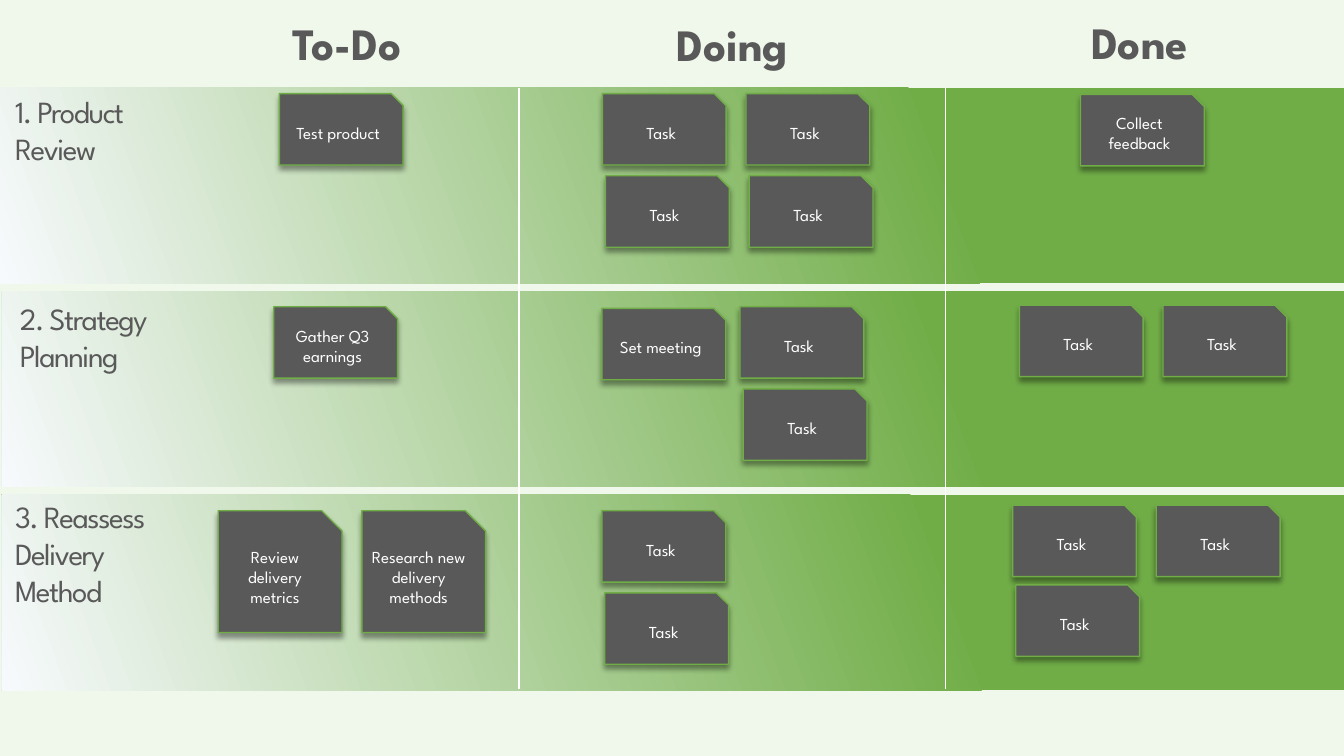
from dataclasses import dataclass

import pptx
import pptx.dml.color
import pptx.enum.shapes
import pptx.enum.text
import pptx.oxml
import pptx.oxml.ns
import pptx.util
from pptx.util import Cm

RGB = pptx.dml.color.RGBColor.from_string
SHAPES = pptx.enum.shapes.MSO_SHAPE
ALIGN = pptx.enum.text.PP_ALIGN


@dataclass(frozen=True)
class Theme:
    font: str = "League Spartan"
    background: str = "F0F7EB"
    green: str = "70AD47"
    pale: str = "F7FAFD"
    gray: str = "595959"
    white: str = "FFFFFF"
    heading_size: int = 32
    label_size: int = 22
    card_size: int = 12


THEME = Theme()

# Board measures in centimetres
SLIDE_WIDTH, SLIDE_HEIGHT = 33.87, 19.05
BAND_TOP, BAND_HEIGHT, BAND_PITCH = 2.21, 4.93, 5.13
BOARD_BOTTOM = 17.37
CARD_WIDTH, CARD_HEIGHT, TALL_CARD_HEIGHT = 3.12, 1.8, 3.07
CARD_PITCH = 3.62

# Column headings: text, left, top, width
HEADINGS = [
    ("To-Do", 4.42, 0.28, 8.66),
    ("Doing", 13.08, 0.3, 10.75),
    ("Done", 23.83, 0.25, 9.78),
]

# Rows: label, band left, label left, label top, label height
ROWS = [
    ("1. Product Review", 0, 0.13, 2.21, 2.13),
    ("2. Strategy Planning", 0.05, 0.25, 7.44, 2.13),
    ("3. Reassess Delivery Method", 0.05, 0.13, 12.42, 3.07),
]

# Runs of cards side by side: left, top, height, labels
CARD_RUNS = [
    # Product review
    (7.04, 2.36, CARD_HEIGHT, ["Test product"]),
    (15.18, 2.36, CARD_HEIGHT, ["Task", "Task"]),
    (15.26, 4.43, CARD_HEIGHT, ["Task", "Task"]),
    (27.23, 2.38, CARD_HEIGHT, ["Collect feedback"]),
    # Strategy planning
    (6.9, 7.73, CARD_HEIGHT, ["Gather Q3 earnings"]),
    (15.17, 7.77, CARD_HEIGHT, ["Set meeting"]),
    (18.65, 7.73, CARD_HEIGHT, ["Task"]),
    (18.73, 9.8, CARD_HEIGHT, ["Task"]),
    (25.69, 7.69, CARD_HEIGHT, ["Task", "Task"]),
    # Delivery method
    (5.5, 12.87, TALL_CARD_HEIGHT, ["Review delivery metrics", "Research new delivery methods"]),
    (15.17, 12.87, CARD_HEIGHT, ["Task"]),
    (15.24, 14.94, CARD_HEIGHT, ["Task"]),
    (25.52, 12.73, CARD_HEIGHT, ["Task", "Task"]),
    (25.6, 14.74, CARD_HEIGHT, ["Task"]),
]


def add_run(paragraph, text, size, color, bold=False, spacing=None):
    run = paragraph.add_run()
    run.text = text
    run.font.name = THEME.font
    run.font.size = pptx.util.Pt(size)
    run.font.bold = bold
    run.font.color.rgb = RGB(color)
    if spacing is not None:
        run.font._element.set("spc", str(spacing))


def add_text(slide, text, left, top, width, height, size, alignment, **style):
    box = slide.shapes.add_textbox(Cm(left), Cm(top), Cm(width), Cm(height))
    frame = box.text_frame
    frame.word_wrap = True
    frame.auto_size = pptx.enum.text.MSO_AUTO_SIZE.SHAPE_TO_FIT_TEXT
    paragraph = frame.paragraphs[0]
    paragraph.alignment = alignment
    add_run(paragraph, text, size, THEME.gray, **style)


def add_band(slide, left, top):
    band = slide.shapes.add_shape(
        SHAPES.RECTANGLE, Cm(left), Cm(top), Cm(SLIDE_WIDTH), Cm(BAND_HEIGHT))
    band.shadow.inherit = False
    band.line.fill.background()
    band.fill.gradient()
    band.fill.gradient_angle = 200  # counter-clockwise
    stops = [(0.3, THEME.green), (1, THEME.pale)]
    for stop, (position, color) in zip(band.fill.gradient_stops, stops):
        stop.position = position
        stop.color.rgb = RGB(color)


def add_divider(slide, left):
    divider = slide.shapes.add_connector(
        pptx.enum.shapes.MSO_CONNECTOR.STRAIGHT,
        Cm(left), Cm(BAND_TOP), Cm(left), Cm(BOARD_BOTTOM))
    divider.line.color.rgb = RGB(THEME.white)
    divider.line.width = pptx.util.Pt(1)
    divider._element.spPr.append(pptx.oxml.parse_xml(
        f'<a:effectLst {pptx.oxml.ns.nsdecls("a")}/>'))


def add_drop_shadow(shape):
    shape.shadow.inherit = False
    effects = shape._element.spPr.find(pptx.oxml.ns.qn("a:effectLst"))
    effects.append(pptx.oxml.parse_xml(
        f'<a:outerShdw {pptx.oxml.ns.nsdecls("a")} blurRad="50800" dist="38100" '
        'dir="5400000" algn="t" rotWithShape="0">'
        '<a:srgbClr val="000000"><a:alpha val="40000"/></a:srgbClr></a:outerShdw>'))


def add_card(slide, text, left, top, height):
    card = slide.shapes.add_shape(
        SHAPES.SNIP_1_RECTANGLE, Cm(left), Cm(top), Cm(CARD_WIDTH), Cm(height))
    card.fill.solid()
    card.fill.fore_color.rgb = RGB(THEME.gray)
    card.line.color.rgb = RGB(THEME.green)
    card.line.width = pptx.util.Pt(1)
    add_drop_shadow(card)
    frame = card.text_frame
    frame.word_wrap = True
    frame.vertical_anchor = pptx.enum.text.MSO_ANCHOR.MIDDLE
    paragraph = frame.paragraphs[0]
    paragraph.alignment = ALIGN.CENTER
    add_run(paragraph, text, THEME.card_size, THEME.white)


def main():
    presentation = pptx.Presentation()
    presentation.slide_width = Cm(SLIDE_WIDTH)
    presentation.slide_height = Cm(SLIDE_HEIGHT)
    slide = presentation.slides.add_slide(presentation.slide_layouts[6])
    slide.background.fill.solid()
    slide.background.fill.fore_color.rgb = RGB(THEME.background)

    # Column headings
    for text, left, top, width in HEADINGS:
        add_text(slide, text, left, top, width, 1.62,
                 THEME.heading_size, ALIGN.CENTER, bold=True)

    # Rows with their labels
    for index, (label, band_left, left, top, height) in enumerate(ROWS):
        add_band(slide, band_left, BAND_TOP + index * BAND_PITCH)
        add_text(slide, label, left, top, 4.57, height,
                 THEME.label_size, ALIGN.LEFT, spacing=-100)

    # Dividers between the columns
    for _, left, _, _ in HEADINGS[1:]:
        add_divider(slide, left)

    # Task cards
    for left, top, height, labels in CARD_RUNS:
        for index, label in enumerate(labels):
            add_card(slide, label, left + index * CARD_PITCH, top, height)

    presentation.save("out.pptx")


if __name__ == "__main__":
    main()
